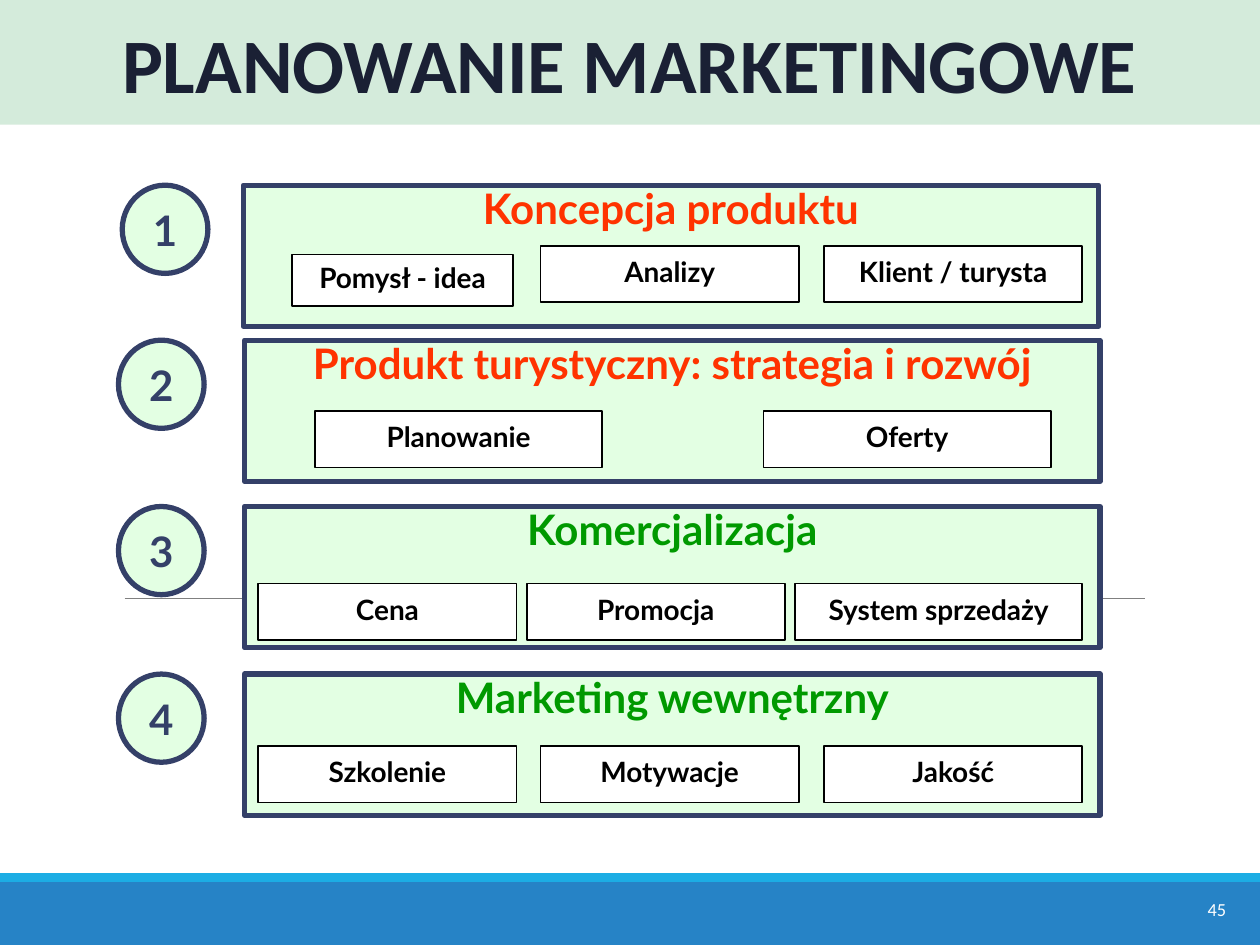
from dataclasses import dataclass

from lxml.etree import SubElement
from pptx import Presentation
from pptx.dml.color import RGBColor
from pptx.enum.shapes import MSO_CONNECTOR, MSO_SHAPE
from pptx.enum.text import MSO_ANCHOR, PP_ALIGN
from pptx.oxml.ns import qn
from pptx.util import Inches, Pt

COLUMNS, ROWS = 100, 75
SLIDE_WIDTH, SLIDE_HEIGHT = Inches(10), Inches(7.5)


@dataclass(frozen=True)
class Theme:
    heading_font: str = "Calibri"
    body_font: str = "Lato"
    title_size: float = 44
    stage_size: float = 24
    step_size: float = 16
    number_size: float = 10.5
    banner: str = "D4EBDB"
    title: str = "1A2034"
    panel: str = "E3FFE3"
    frame: str = "344068"
    product: str = "FF3300"
    market: str = "009900"
    white: str = "FFFFFF"
    black: str = "000000"
    rule: str = "808080"
    footer: str = "2683C6"
    footer_edge: str = "1CADE4"


THEME = Theme()

STAGES = [
    (19.3, 9.7, 14.7, "Koncepcja produktu", THEME.product, [
        (23.2, 20.2, 17.5, 4.1, "Pomysł - idea"),
        (42.9, 19.5, 20.5, 4.5, "Analizy"),
        (65.4, 19.5, 20.5, 4.5, "Klient / turysta"),
    ]),
    (19.4, 9.4, 27, "Produkt turystyczny: strategia i rozwój", THEME.product, [
        (25, 32.6, 22.8, 4.5, "Planowanie"),
        (60.6, 32.6, 22.8, 4.5, "Oferty"),
    ]),
    (19.4, 9.4, 40.2, "Komercjalizacja", THEME.market, [
        (20.5, 46.3, 20.5, 4.5, "Cena"),
        (41.8, 46.3, 20.5, 4.5, "Promocja"),
        (63.1, 46.3, 22.8, 4.5, "System sprzedaży"),
    ]),
    (19.4, 9.4, 53.5, "Marketing wewnętrzny", THEME.market, [
        (20.5, 59.2, 20.5, 4.5, "Szkolenie"),
        (42.9, 59.2, 20.5, 4.5, "Motywacje"),
        (65.4, 59.2, 20.5, 4.5, "Jakość"),
    ]),
]


def across(columns):
    return round(SLIDE_WIDTH * columns / COLUMNS)


def down(rows):
    return round(SLIDE_HEIGHT * rows / ROWS)


def place(left, top, width, height):
    return across(left), down(top), across(width), down(height)


def color(code):
    return RGBColor.from_string(code)


def add_box(page, area, fill, line=None, line_width=1, kind=MSO_SHAPE.RECTANGLE):
    box = page.shapes.add_shape(kind, *place(*area))
    box.shadow.inherit = False
    box.fill.solid()
    box.fill.fore_color.rgb = color(fill)
    if line:
        box.line.color.rgb = color(line)
        box.line.width = Pt(line_width)
    else:
        box.line.fill.background()
    return box


def write(box, text, font, size, ink, bold=True, anchor=MSO_ANCHOR.MIDDLE,
          align=PP_ALIGN.CENTER, spacing=None, margins=(0.1, 0.05)):
    frame = box.text_frame
    frame.word_wrap = True
    frame.vertical_anchor = anchor
    frame.margin_left = frame.margin_right = Inches(margins[0])
    frame.margin_top = frame.margin_bottom = Inches(margins[1])
    frame.text = text
    para = frame.paragraphs[0]
    para.alignment = align
    if spacing:
        para.line_spacing = spacing
    span = para.runs[0]
    span.font.name = font
    span.font.size = Pt(size)
    span.font.bold = bold
    span.font.color.rgb = color(ink)


def add_rule(page, left, right, top):
    rule = page.shapes.add_connector(
        MSO_CONNECTOR.STRAIGHT, across(left), down(top), across(right), down(top))
    rule.line.color.rgb = color(THEME.rule)
    rule.line.width = Pt(0.5)
    SubElement(rule._element.spPr, qn("a:effectLst"))


def add_footer(page):
    add_box(page, (0, 70, 100, 5), THEME.footer)
    add_box(page, (0, 69.3, 100, 0.7), THEME.footer_edge)
    number = page.shapes.add_textbox(*place(90, 70.8, 8.3, 2.7))
    write(number, "45", THEME.heading_font, THEME.number_size, THEME.white,
          bold=False, align=PP_ALIGN.RIGHT)


def add_title(page, text):
    banner = add_box(page, (0, 0, 100, 9.9), THEME.banner)
    write(banner, text, THEME.heading_font, THEME.title_size, THEME.title)


def add_step(page, left, top, width, height, text):
    step = add_box(page, (left, top, width, height), THEME.white, THEME.black)
    write(step, text, THEME.body_font, THEME.step_size, THEME.black,
          spacing=0.85, margins=(0.09, 0.04))


def add_stage(page, number, left, badge_left, top, heading, ink, steps):
    panel = add_box(page, (left, top, 67.9, 11.2), THEME.panel, THEME.frame, 3)
    write(panel, heading, THEME.body_font, THEME.stage_size, ink,
          anchor=MSO_ANCHOR.TOP, spacing=0.85, margins=(0.09, 0.04))
    for step in steps:
        add_step(page, *step)
    badge = add_box(page, (badge_left, top, 6.8, 7), THEME.panel, THEME.frame, 3,
                    MSO_SHAPE.OVAL)
    write(badge, str(number), THEME.body_font, THEME.stage_size, THEME.frame,
          anchor=MSO_ANCHOR.TOP)


def main():
    deck = Presentation()
    deck.slide_width, deck.slide_height = SLIDE_WIDTH, SLIDE_HEIGHT
    page = deck.slides.add_slide(deck.slide_layouts[6])
    add_footer(page)
    add_rule(page, 9.9, 90.9, 47.5)
    add_title(page, "PLANOWANIE MARKETINGOWE")
    for number, stage in enumerate(STAGES, 1):
        add_stage(page, number, *stage)
    deck.save("out.pptx")


if __name__ == "__main__":
    main()
